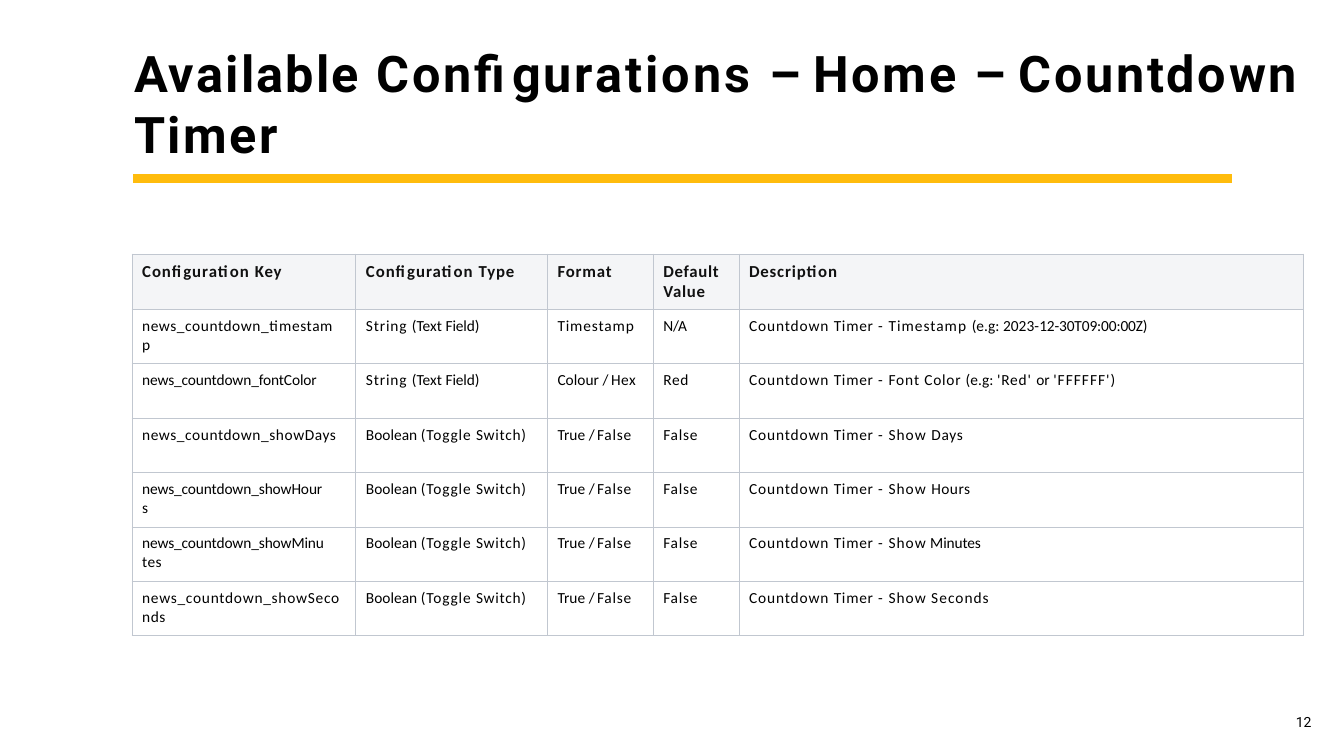
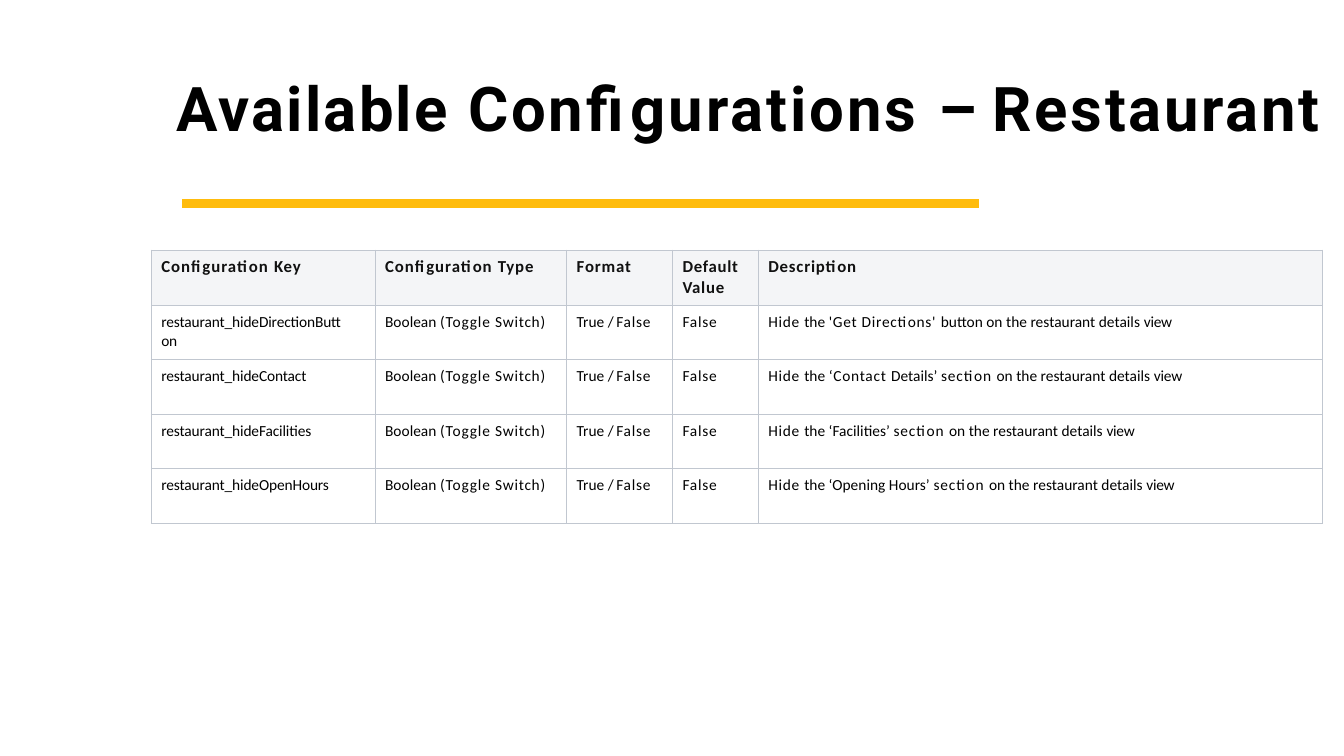
import pptx
import pptx.dml.color
import pptx.enum.shapes
import pptx.enum.text
import pptx.oxml
import pptx.oxml.ns
import pptx.util

Inches = pptx.util.Inches
Pt = pptx.util.Pt
ANCHOR = pptx.enum.text.MSO_ANCHOR
ALIGN = pptx.enum.text.PP_ALIGN
AUTO = pptx.enum.text.MSO_AUTO_SIZE

COLORS = {
    "text": "000000",
    "heading": "111111",
    "rule": "FFBC0D",
    "header_fill": "F4F5F7",
    "border": "C1C7D0",
}
HEAD_FONT = {"name": "Calibri", "size": Pt(12), "bold": True}
BODY_FONT = {"name": "Calibri", "size": Pt(11), "bold": False}
PAGE_FONT = {"name": "Roboto", "size": Pt(10), "bold": False}
TITLE_FRAME = {
    "word_wrap": True,
    "auto_size": AUTO.SHAPE_TO_FIT_TEXT,
    "vertical_anchor": ANCHOR.MIDDLE,
    "margin_left": Inches(0.01),
    "margin_top": Inches(0.01),
    "margin_right": 0,
    "margin_bottom": 0,
}
PAGE_FRAME = {
    "word_wrap": False,
    "auto_size": AUTO.SHAPE_TO_FIT_TEXT,
    "vertical_anchor": ANCHOR.BOTTOM,
    "margin_left": Inches(0.05),
    "margin_top": 0,
    "margin_right": Inches(0.05),
    "margin_bottom": 0,
}
CELL_FORMAT = {
    "vertical_anchor": ANCHOR.TOP,
    "margin_left": Inches(0.1),
    "margin_top": Inches(0.07),
    "margin_right": 0,
    "margin_bottom": 0,
}
COLUMN_WIDTHS = [2.22, 1.9, 1.05, 0.85, 5.6]
HEADER_HEIGHT = 0.55
ROW_HEIGHT = 0.54

TITLE_START = [("Available ", 1.6), ("Configurations ", 2.1), ("– ", 0)]
HEADER = [
    [("Configuration ", 0.7), ("Key", 0.6)],
    [("Configuration ", 0.7), ("Type", 0.6)],
    [("Format", 0.6)],
    [("Default Value", 0.5)],
    [("Description", 0.6)],
]
STRING = [("String ", 0.6), ("(Text ", 0), ("Field)", -0.1)]
SWITCH = [
    [("Boolean ", 0), ("(Toggle ", 0.6), ("Switch)", 0.5)],
    [("True ", 0), ("/ ", -0.8), ("False", 0.5)],
    [("False", 0.5)],
]
COUNTDOWN = [("Countdown ", 0.6), ("Timer ", 0.5), ("- ", 0.8)]
HIDE = [("Hide ", 0.5), ("the ", 0)]
SECTION = [("section ", 0.6)]
DETAILS_VIEW = [("on the restaurant details ", 0), ("view", -0.2)]


def switch_row(key, description):
    return [key, *SWITCH, description]


COUNTDOWN_ROWS = [
    [
        [("news_countdown_timestam\n", 0.4), ("p", 0.1)],
        STRING,
        [("Timestamp", 0.6)],
        [("N/A", -0.2)],
        COUNTDOWN + [("Timestamp ", 0.7), ("(e.g: 2023-", 0), ("12-30T09:00:00Z)", -0.1)],
    ],
    [
        [("news_countdown_fontColor", -0.1)],
        STRING,
        [("Colour ", 0), ("/ ", -0.7), ("Hex", 0.4)],
        [("Red", 0.4)],
        COUNTDOWN + [("Font ", 0.6), ("Color ", 0.5), ("(e.g: ", 0),
                     ("'Red' ", 0.6), ("or ", 0), ("'FFFFFF')", 0.7)],
    ],
    switch_row([("news_countdown_showDays", 0.4)],
               COUNTDOWN + [("Show ", 0.7), ("Days", 0.5)]),
    switch_row([("news_countdown_showHour\n", -0.1), ("s", 0.6)],
               COUNTDOWN + [("Show ", 0.7), ("Hours", 0.3)]),
    switch_row([("news_countdown_showMinu\n", -0.1), ("tes", 0.3)],
               COUNTDOWN + [("Show", 0.7), (" Minutes", -0.1)]),
    switch_row([("news_countdown_showSeco\n", 0.5), ("nds", 0.4)],
               COUNTDOWN + [("Show Seconds", 0.7)]),
]
RESTAURANT_ROWS = [
    switch_row([("restaurant_hideDirectionButt\n", -0.1), ("on", -0.2)],
               HIDE + [("'Get Directions' ", 0.5), ("button ", 0)] + DETAILS_VIEW),
    switch_row([("restaurant_hideContact", -0.1)],
               HIDE + [("‘Contact ", 0.5), ("Details’ ", 0)] + SECTION + DETAILS_VIEW),
    switch_row([("restaurant_hideFacilities", -0.1)],
               HIDE + [("‘Facilities’ ", 0)] + SECTION + DETAILS_VIEW),
    switch_row([("restaurant_hideOpenHours", -0.1)],
               HIDE + [("‘Opening Hours’ ", 0)] + SECTION + DETAILS_VIEW),
]


def rgb(name):
    return pptx.dml.color.RGBColor.from_string(COLORS[name])


def apply(target, values):
    for name, value in values.items():
        setattr(target, name, value)


def add_runs(p, runs, font, color):
    for text, spacing in runs:
        r = p.add_run()
        r.text = text.rstrip("\n")
        apply(r.font, font)
        r.font.color.rgb = rgb(color)
        r._r.get_or_add_rPr().set("spc", str(round(spacing * 100)))
        if text.endswith("\n"):
            p.add_line_break()


def add_text(s, box, runs, frame, font):
    tf = s.shapes.add_textbox(*map(Inches, box)).text_frame
    apply(tf, frame)
    p = tf.paragraphs[0]
    add_runs(p, runs, font, "text")
    return p


def add_title(s, box, runs, size):
    font = {"name": "Roboto", "size": Pt(size), "bold": True}
    add_text(s, box, TITLE_START + runs, TITLE_FRAME, font)


def add_rule(s, left, top, width):
    sp = s.shapes.add_connector(
        pptx.enum.shapes.MSO_CONNECTOR.STRAIGHT,
        Inches(left), Inches(top), Inches(left + width), Inches(top))
    sp.line.color.rgb = rgb("rule")
    sp.line.width = Pt(6)
    sp._element.spPr.append(pptx.oxml.parse_xml(
        f'<a:effectLst {pptx.oxml.ns.nsdecls("a")}/>'))


def add_borders(cell):
    tcPr = cell._tc.get_or_add_tcPr()
    for i, side in enumerate("LRTB"):
        tcPr.insert(i, pptx.oxml.parse_xml(
            f'<a:ln{side} {pptx.oxml.ns.nsdecls("a")} w="{Pt(0.75)}">'
            f'<a:solidFill><a:srgbClr val="{COLORS["border"]}"/></a:solidFill>'
            f'</a:ln{side}>'))


def fill_cell(cell, runs, is_header):
    apply(cell, CELL_FORMAT)
    if is_header:
        cell.fill.solid()
        cell.fill.fore_color.rgb = rgb("header_fill")
        font, color = HEAD_FONT, "heading"
    else:
        cell.fill.background()
        font, color = BODY_FONT, "text"
    add_borders(cell)
    add_runs(cell.text_frame.paragraphs[0], runs, font, color)


def add_config_table(s, left, top, rows):
    height = HEADER_HEIGHT + ROW_HEIGHT * len(rows)
    table = s.shapes.add_table(
        len(rows) + 1, len(COLUMN_WIDTHS), Inches(left), Inches(top),
        Inches(sum(COLUMN_WIDTHS)), Inches(height)).table
    apply(table, {"first_row": False, "horz_banding": False})
    for column, width in zip(table.columns, COLUMN_WIDTHS):
        column.width = Inches(width)
    for i, row in enumerate([HEADER] + rows):
        table.rows[i].height = Inches(ROW_HEIGHT if i else HEADER_HEIGHT)
        for j, runs in enumerate(row):
            fill_cell(table.cell(i, j), runs, i == 0)


def add_page_number(s, number):
    p = add_text(s, (12.79, 7.09, 0.28, 0.16), [(number, 0)], PAGE_FRAME, PAGE_FONT)
    apply(p, {"alignment": ALIGN.CENTER, "line_spacing": 0.9})


def main():
    prs = pptx.Presentation()
    apply(prs, {"slide_width": Inches(13.33), "slide_height": Inches(7.5)})
    blank = prs.slide_layouts[6]

    s = prs.slides.add_slide(blank)
    add_title(s, (1.32, 0.4, 11.59, 1.23),
              [("Home ", 1.9), ("– ", 0), ("Countdown ", 1.9), ("Timer", 1.8)], 36)
    add_rule(s, 1.32, 1.77, 10.9)
    add_config_table(s, 1.31, 2.52, COUNTDOWN_ROWS)
    add_page_number(s, "12")

    s = prs.slides.add_slide(blank)
    add_title(s, (1.74, 0.78, 11.59, 0.56), [("Restaurant", 1.9)], 44)
    add_rule(s, 1.81, 2.02, 7.9)
    add_config_table(s, 1.5, 2.48, RESTAURANT_ROWS)

    prs.save("out.pptx")


if __name__ == "__main__":
    main()
